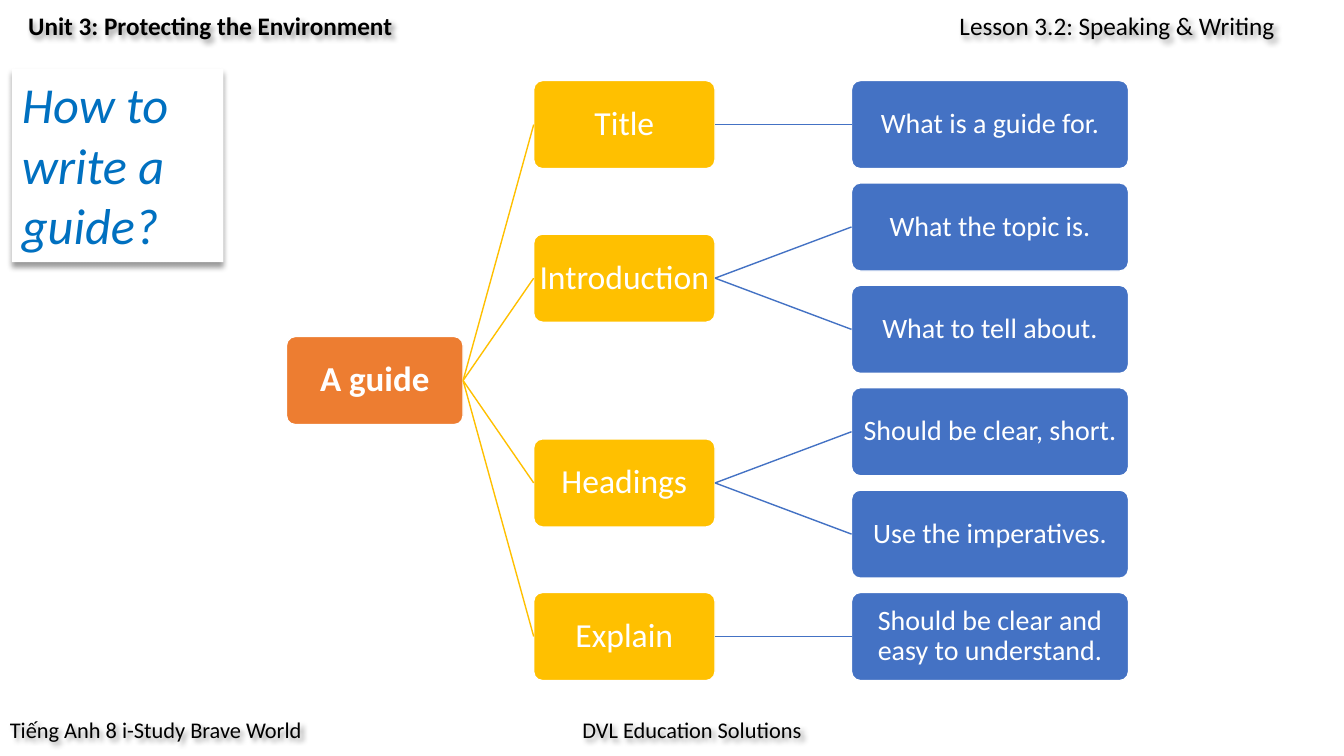
from dataclasses import dataclass

from lxml.etree import SubElement
from pptx import Presentation
from pptx.dml.color import RGBColor as Rgb
from pptx.enum.shapes import MSO_CONNECTOR as Connector
from pptx.enum.shapes import MSO_SHAPE as Shape
from pptx.enum.text import MSO_ANCHOR as Anchor
from pptx.enum.text import PP_ALIGN as Align
from pptx.oxml.ns import qn
from pptx.util import Cm, Pt


@dataclass(frozen=True)
class Theme:
    font: str = "Calibri"
    white: str = "FFFFFF"
    black: str = "000000"
    question: str = "0070C0"
    root: str = "ED7D31"
    branch: str = "FFC000"
    leaf: str = "4472C4"
    header_size: int = 18
    footer_size: int = 16
    question_size: int = 36
    root_size: int = 25
    branch_size: int = 24
    leaf_size: int = 20


THEME = Theme()

GUIDE = [
    ("Title", ["What is a guide for."]),
    ("Introduction", ["What the topic is.", "What to tell about."]),
    ("Headings", ["Should be clear, short.", "Use the imperatives."]),
    ("Explain", ["Should be clear and easy to understand."]),
]


def write(shape, text, size, color, bold=False, italic=False):
    frame = shape.text_frame
    frame.word_wrap = True
    frame.text = text
    font = frame.paragraphs[0].runs[0].font
    font.name, font.size, font.bold, font.italic = THEME.font, Pt(size), bold, italic
    font.color.rgb = Rgb.from_string(color)
    return frame


def cast_shadow(shape, angle):
    effects = SubElement(shape.element.spPr, qn("a:effectLst"))
    shadow = SubElement(effects, qn("a:outerShdw"), blurRad=str(Pt(4)), dist=str(Pt(3)),
                        dir=str(angle * 60000), algn="t", rotWithShape="0")
    color = SubElement(shadow, qn("a:srgbClr"), val=THEME.black)
    SubElement(color, qn("a:alpha"), val="40000")


def add_caption(slide, box, text, size, bold=False):
    caption = slide.shapes.add_textbox(*(Cm(length) for length in box))
    write(caption, text, size, THEME.black, bold)
    cast_shadow(caption, 45)


def add_header(slide, left, top, width, height):
    add_caption(slide, (left + width - 8.48, top, 8.48, height),
                "Lesson 3.2: Speaking & Writing", THEME.header_size)
    add_caption(slide, (left, top, 12.55, height),
                "Unit 3: Protecting the Environment", THEME.header_size, True)


def add_footer(slide, left, top, width, height):
    add_caption(slide, (left, top, 8.15, height),
                "Tiếng Anh 8 i-Study Brave World", THEME.footer_size)
    add_caption(slide, (left + width - 6.25, top, 6.25, height),
                "DVL Education Solutions", THEME.footer_size)


def add_question(slide, left, top, width, height):
    card = slide.shapes.add_shape(Shape.RECTANGLE, Cm(left), Cm(top), Cm(width), Cm(height))
    card.fill.solid()
    card.fill.fore_color.rgb = Rgb.from_string(THEME.white)
    card.line.fill.background()
    cast_shadow(card, 90)
    frame = write(card, "How to write a guide?", THEME.question_size, THEME.question, italic=True)
    frame.vertical_anchor = Anchor.TOP
    frame.paragraphs[0].alignment = Align.LEFT


def add_node(slide, box, text, color, size, bold=False):
    node = slide.shapes.add_shape(Shape.ROUNDED_RECTANGLE, *(Cm(length) for length in box))
    node.adjustments[0] = 0.1
    node.shadow.inherit = False
    node.fill.solid()
    node.fill.fore_color.rgb = Rgb.from_string(color)
    node.line.color.rgb = Rgb.from_string(THEME.white)
    node.line.width = Pt(1)
    frame = write(node, text, size, THEME.white, bold)
    frame.margin_left = frame.margin_right = frame.margin_top = frame.margin_bottom = 0
    frame.vertical_anchor = Anchor.MIDDLE
    frame.paragraphs[0].alignment = Align.CENTER
    frame.paragraphs[0].line_spacing = 0.9
    return node


def join(slide, parent, child, color):
    link = slide.shapes.add_connector(Connector.STRAIGHT, 0, 0, 0, 0)
    link.begin_connect(parent, 3)
    link.end_connect(child, 1)
    link.line.color.rgb = Rgb.from_string(color)
    link.line.width = Pt(1)
    SubElement(link.element.spPr, qn("a:effectLst"))


def add_guide_tree(slide, left, top, width, height):
    root_width, branch_width, leaf_width, node_height = 4.45, 4.57, 6.98, 2.22
    branch_left = left + 6.23
    leaf_left = left + width - leaf_width
    leaf_count = sum(len(leaves) for _, leaves in GUIDE)
    pitch = (height - node_height) / (leaf_count - 1)

    root = add_node(slide, (left, top + (height - node_height) / 2, root_width, node_height),
                    "A guide", THEME.root, THEME.root_size, True)
    row = 0
    for title, leaves in GUIDE:
        branch_top = top + (row + (len(leaves) - 1) / 2) * pitch
        branch = add_node(slide, (branch_left, branch_top, branch_width, node_height),
                          title, THEME.branch, THEME.branch_size)
        join(slide, root, branch, THEME.branch)
        for advice in leaves:
            leaf = add_node(slide, (leaf_left, top + row * pitch, leaf_width, node_height),
                            advice, THEME.leaf, THEME.leaf_size)
            join(slide, branch, leaf, THEME.leaf)
            row += 1


def main():
    deck = Presentation()
    deck.slide_width, deck.slide_height = Cm(33.87), Cm(19.05)
    slide = deck.slides.add_slide(deck.slide_layouts[6])
    add_header(slide, 0.46, 0.13, 31.95, 1.02)
    add_footer(slide, 0, 17.91, 20.68, 0.94)
    add_question(slide, 0.3, 1.73, 5.33, 4.88)
    add_guide_tree(slide, 7.22, 2.03, 21.22, 15.12)
    deck.save("out.pptx")


if __name__ == "__main__":
    main()
